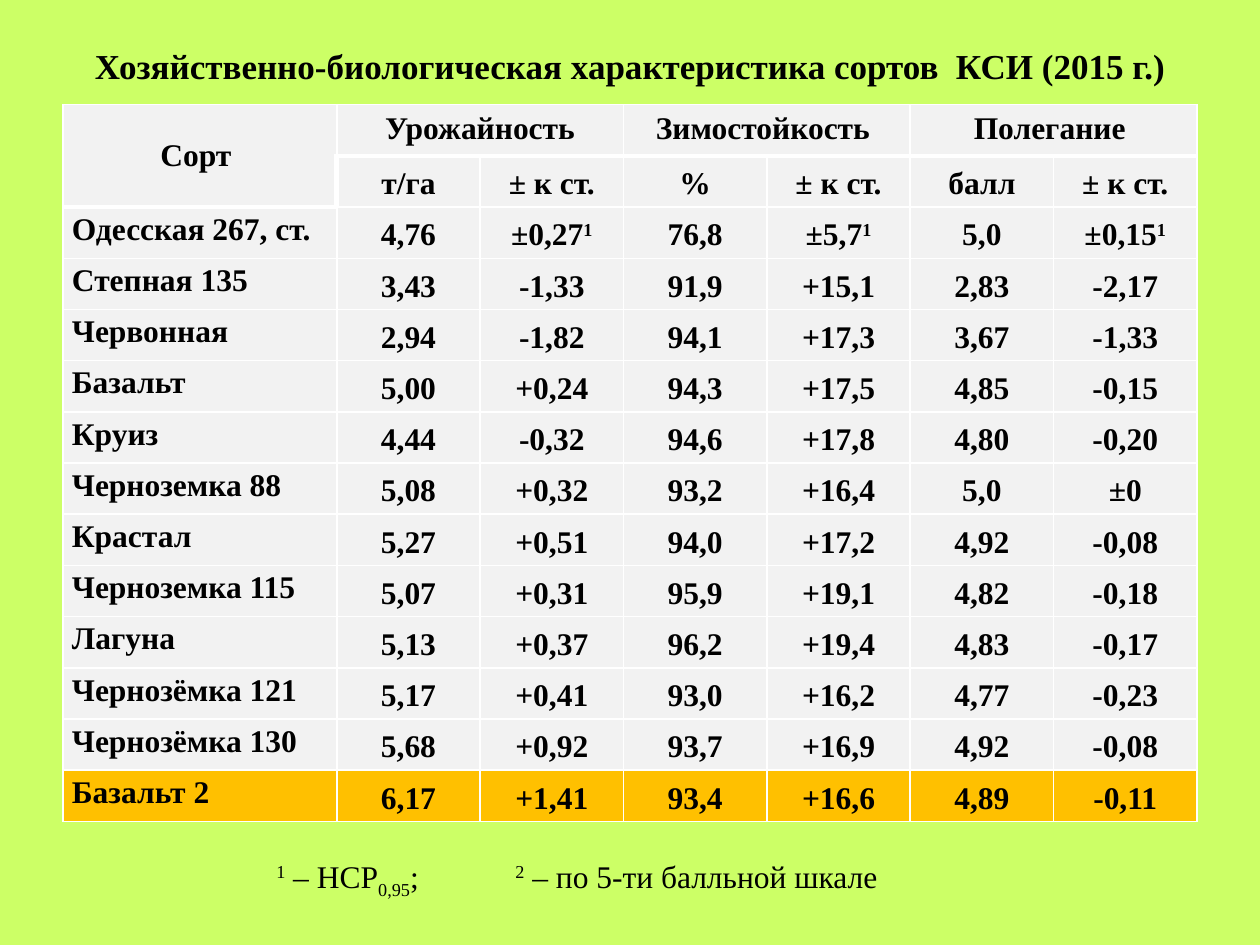
"""Build a slide with a table of winter wheat variety trial results."""
from lxml import etree
from pptx import Presentation
from pptx.dml.color import RGBColor
from pptx.enum.text import MSO_ANCHOR, PP_ALIGN
from pptx.oxml.ns import qn
from pptx.util import Cm, Pt

CENTER, LEFT = PP_ALIGN.CENTER, PP_ALIGN.LEFT
MIDDLE, TOP = MSO_ANCHOR.MIDDLE, MSO_ANCHOR.TOP
rgb = RGBColor.from_string

GROUPS = ["Сорт ", "Урожайность", "", "Зимостойкость ", "", "Полегание ", ""]
UNITS = ["", "т/га", "± к ст.", "%", "± к ст.", "балл", "± к ст."]
VARIETIES = [
    ["Одесская 267, ст.", "4,76", "±0,27^1", "76,8", "±5,7^1", "5,0", "±0,15^1"],
    ["Степная 135", "3,43", "-1,33", "91,9", "+15,1", "2,83", "-2,17"],
    ["Червонная", "2,94", "-1,82", "94,1", "+17,3", "3,67", "-1,33"],
    ["Базальт", "5,00", "+0,24", "94,3", "+17,5", "4,85", "-0,15"],
    ["Круиз", "4,44", "-0,32", "94,6", "+17,8", "4,80", "-0,20"],
    ["Черноземка 88", "5,08", "+0,32", "93,2", "+16,4", "5,0", "±0"],
    ["Крастал", "5,27", "+0,51", "94,0", "+17,2", "4,92", "-0,08"],
    ["Черноземка 115", "5,07", "+0,31", "95,9", "+19,1", "4,82", "-0,18"],
    ["Лагуна", "5,13", "+0,37", "96,2", "+19,4", "4,83", "-0,17"],
    ["Чернозёмка 121", "5,17", "+0,41", "93,0", "+16,2", "4,77", "-0,23"],
    ["Чернозёмка 130", "5,68", "+0,92", "93,7", "+16,9", "4,92", "-0,08"],
    ["Базальт 2", "6,17", "+1,41", "93,4", "+16,6", "4,89", "-0,11"],
]
ROWS = [GROUPS, UNITS] + VARIETIES


def write(p, parts, size, bold, align):
    for text, baseline in parts:
        r = p.add_run()
        r.text = text
        if baseline:
            r.font._element.set("baseline", str(baseline * 1000))
    p.alignment = align
    p.font.name = "Times New Roman"
    p.font.size = Pt(size)
    p.font.bold = bold
    p.font.color.rgb = rgb("000000")


def add_border(cell, side, width):
    ln = etree.SubElement(cell._tc.get_or_add_tcPr(), qn(f"a:ln{side}"), w=str(Pt(width)))
    fill = etree.SubElement(ln, qn("a:solidFill"))
    etree.SubElement(fill, qn("a:srgbClr"), val="FFFFFF")


prs = Presentation()
prs.slide_width, prs.slide_height = Cm(25.4), Cm(19.05)
s = prs.slides.add_slide(prs.slide_layouts[6])
s.background.fill.solid()
s.background.fill.fore_color.rgb = rgb("CCFF66")

title = s.shapes.add_textbox(Cm(0.43), Cm(0.76), Cm(24.55), Cm(1.14))
tf = title.text_frame
tf.word_wrap = True
tf.vertical_anchor = MIDDLE
write(tf.paragraphs[0],
      [("Хозяйственно-биологическая характеристика сортов  КСИ (2015 г.)", 0)],
      20, True, CENTER)

table = s.shapes.add_table(len(ROWS), 7, Cm(1.27), Cm(2.11), Cm(22.86), Cm(14.45)).table
for i, column in enumerate(table.columns):
    column.width = Cm(2.89 if i else 5.52)
for row in table.rows:
    row.height = Cm(14.45 / len(ROWS))
table.cell(0, 0).merge(table.cell(1, 0))
for col in (1, 3, 5):
    table.cell(0, col).merge(table.cell(0, col + 1))

for i, values in enumerate(ROWS):
    for j, value in enumerate(values):
        cell = table.cell(i, j)
        header_edge = 1 if j == 0 else 0
        add_border(cell, "L", 3 if (i, j) == (1, 1) else 1)
        add_border(cell, "R", 1)
        add_border(cell, "T", 3 if i == 1 + header_edge else 1)
        add_border(cell, "B", 3 if i in (0, header_edge) else 1)
        cell.fill.solid()
        cell.fill.fore_color.rgb = rgb("FFC000" if i == len(ROWS) - 1 else "F2F2F2")
        is_name = i > 1 and j == 0
        cell.vertical_anchor = TOP if is_name or (i == 0 and j > 0) else MIDDLE
        p = cell.text_frame.paragraphs[0]
        if i > 0:
            cell.margin_left = cell.margin_right = Cm(0.18)
            cell.margin_top = cell.margin_bottom = 0
            p.line_spacing = 1.15
        if value:
            text, _, mark = value.partition("^")
            parts = [(text, 0), (mark, 30)] if mark else [(text, 0)]
            write(p, parts, 18, True, LEFT if is_name else CENTER)

footnote = s.shapes.add_textbox(Cm(1.27), Cm(17.15), Cm(22.86), Cm(1.02))
tf = footnote.text_frame
tf.word_wrap = True
tf.margin_left = Cm(4.3)
p = tf.paragraphs[0]
tabs = etree.SubElement(p._p.get_or_add_pPr(), qn("a:tabLst"))
etree.SubElement(tabs, qn("a:tab"), pos=str(Cm(4.82)), algn="l")
write(p, [("1", 30), (" – НСР", 0), ("0,95", -25), (";\t", 0), ("2", 30),
          (" – по 5-ти балльной шкале", 0)], 18, False, LEFT)

prs.save("out.pptx")
